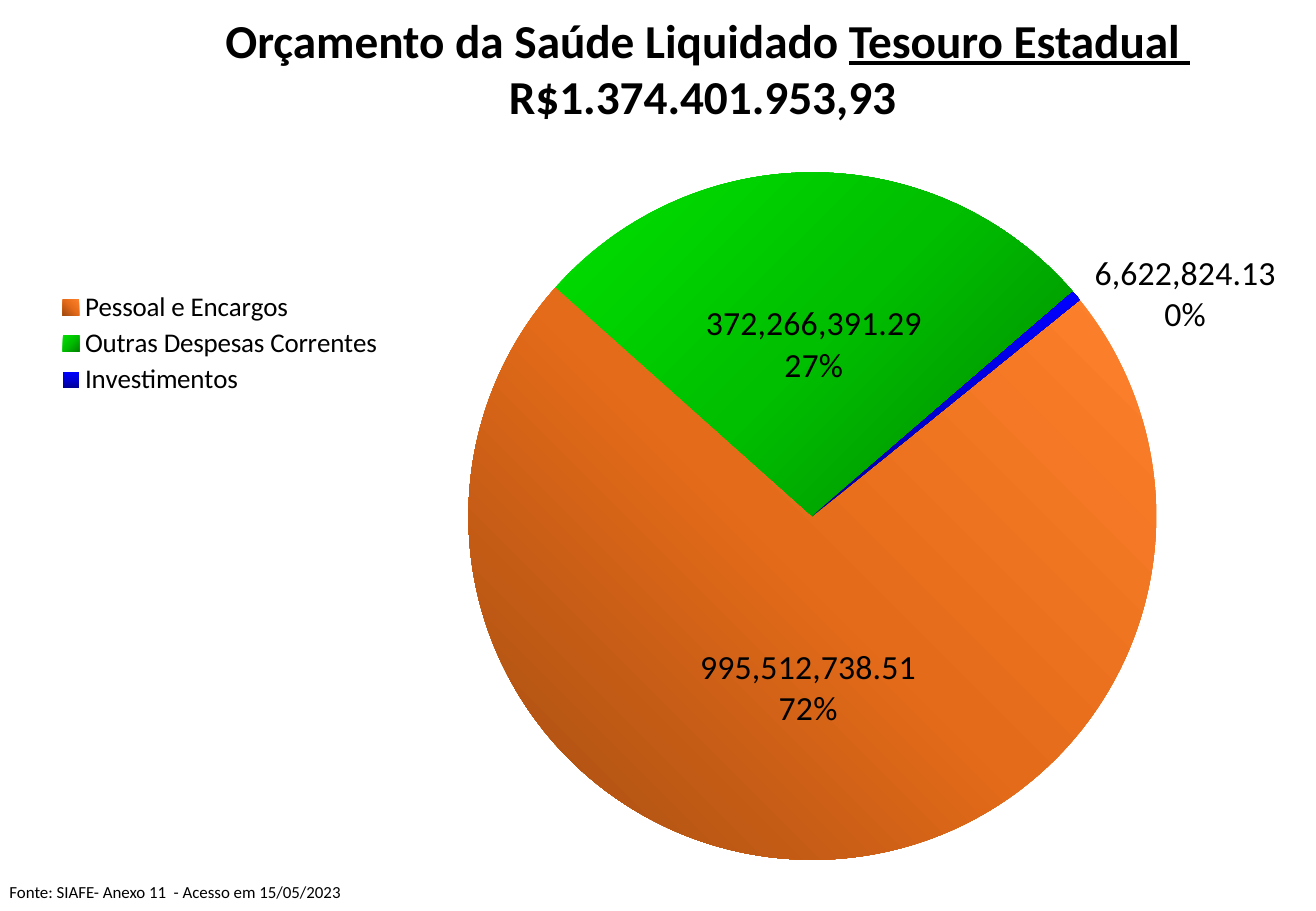
from lxml import etree
from pptx import Presentation
from pptx import util as u
from pptx.chart.data import CategoryChartData
from pptx.dml.color import RGBColor
from pptx.enum import chart as ch, text
from pptx.oxml import parse_xml
from pptx.oxml.ns import nsdecls, qn

FONT = "Calibri"
BUDGET = [
    ("Pessoal e Encargos", 995512738.51, ("A04B11", "E46B19", "FF822D"), "lb"),
    ("Outras Despesas Correntes", 372266391.29, ("008600", "00BE00", "00E200"), "rb"),
    ("Investimentos", 6622824.13, ("000097", "0000D7", "0000FF"), None),
]


def color(value):
    return RGBColor.from_string(value)


def style(font, size, bold=False):
    font.name, font.size, font.bold = FONT, u.Pt(size), bold
    font.color.rgb = color("000000")


def add_run(p, content, size, bold=False, underline=False):
    r = p.add_run()
    r.text = content
    style(r.font, size, bold)
    r.font.underline = underline


def add_box(s, box):
    tf = s.shapes.add_textbox(*map(u.Inches, box)).text_frame
    tf.word_wrap = True
    return tf.paragraphs[0]


def add_title(s, box):
    p = add_box(s, box)
    p.alignment = text.PP_ALIGN.CENTER
    add_run(p, "Orçamento da Saúde Liquidado ", 28, True)
    add_run(p, "Tesouro Estadual ", 28, True, True)
    p.add_line_break()
    add_run(p, "R$1.374.401.953,93 ", 28, True)


def add_source(s, box):
    add_run(add_box(s, box), "Fonte: SIAFE- Anexo 11  - Acesso em 15/05/2023", 10)


def set_gradient(point, stops, corner):
    stop_xml = "".join(
        f'<a:gs pos="{i * 50000}"><a:srgbClr val="{c}"/></a:gs>' for i, c in enumerate(stops))
    if corner:
        side = ("l", "r") if corner == "rb" else ("r", "l")
        direction = (f'<a:path path="circle"><a:fillToRect {side[0]}="100000" {side[1]}="0" '
                     't="100000" b="0"/></a:path>')
    else:
        direction = '<a:lin ang="16200000" scaled="0"/>'
    point.format.line.fill.background()
    point.format.fill.background()
    old = point.format.line._ln.getparent().find(qn("a:noFill"))
    old.getparent().replace(old, parse_xml(
        f'<a:gradFill {nsdecls("a")} rotWithShape="1"><a:gsLst>{stop_xml}</a:gsLst>'
        f'{direction}</a:gradFill>'))


def place(parent, index, values, inner=False, edge=True):
    for old in parent.findall(qn("c:layout")):
        parent.remove(old)
    target = '<c:layoutTarget val="inner"/>' if inner else ""
    modes = '<c:xMode val="edge"/><c:yMode val="edge"/>' if edge else ""
    sizes = "".join(f'<c:{k} val="{v}"/>' for k, v in zip("xywh", values))
    parent.insert(index, parse_xml(
        f'<c:layout {nsdecls("c")}><c:manualLayout>{target}{modes}{sizes}'
        '</c:manualLayout></c:layout>'))


def add_labels(series):
    labels = series.data_labels
    style(labels.font, 20)
    labels.show_value = labels.show_percentage = True
    labels.show_legend_key = labels.show_category_name = False
    labels.number_format, labels.number_format_is_linked = "#,##0.00", True
    labels.position = ch.XL_LABEL_POSITION.CENTER
    outside = series.points[2].data_label
    style(outside.font, 20)
    outside.position = ch.XL_LABEL_POSITION.OUTSIDE_END

    dlbls = labels._element
    small = dlbls.find(qn("c:dLbl"))
    place(small, 1, (0.01, 0.056), edge=False)
    for group in (dlbls, small):
        percent = group.find(qn("c:showPercent"))
        percent.set("val", "1")
        bubble = group.find(qn("c:showBubbleSize"))
        anchor = percent if bubble is None else bubble
        anchor.addnext(parse_xml(f'<c:separator {nsdecls("c")}>\n</c:separator>'))
        group.find(qn("c:txPr")).find(qn("a:bodyPr")).set("wrap", "none")
    for leader in dlbls.findall(qn("c:showLeaderLines")):
        leader.set("val", "0")


def add_pie(s, box):
    data = CategoryChartData(number_format="#,##0.00")
    data.categories = [name for name, *_ in BUDGET]
    data.add_series("Series 1", [value for _, value, *_ in BUDGET])
    chart = s.shapes.add_chart(ch.XL_CHART_TYPE.PIE, *map(u.Inches, box), data).chart
    chart.has_title = False
    style(chart.font, 10)

    chart.has_legend = True
    legend = chart.legend
    legend.position = ch.XL_LEGEND_POSITION.RIGHT
    legend.include_in_layout = False
    style(legend.font, 16)
    place(legend._element, 1, (0.018, 0.282, 0.3, 0.14))

    plot = chart.plots[0]
    plot.vary_by_categories = True
    place(plot._element.getparent(), 0, (0.362, 0.138, 0.537, 0.863), inner=True)
    angle = plot._element.find(qn("c:firstSliceAng"))
    if angle is None:
        angle = etree.SubElement(plot._element, qn("c:firstSliceAng"))
    angle.set("val", "51")

    series = plot.series[0]
    for i, (_, _, stops, corner) in enumerate(BUDGET):
        set_gradient(series.points[i], stops, corner)
    add_labels(series)


def main():
    prs = Presentation()
    prs.slide_width, prs.slide_height = u.Inches(10.83), u.Inches(7.5)
    s = prs.slides.add_slide(prs.slide_layouts[6])
    add_pie(s, (0.04, 0.52, 10.54, 6.56))
    add_title(s, (0.8, 0.04, 10.05, 1.04))
    add_source(s, (-0.02, 7.21, 5.47, 0.27))
    prs.save("out.pptx")


if __name__ == "__main__":
    main()
